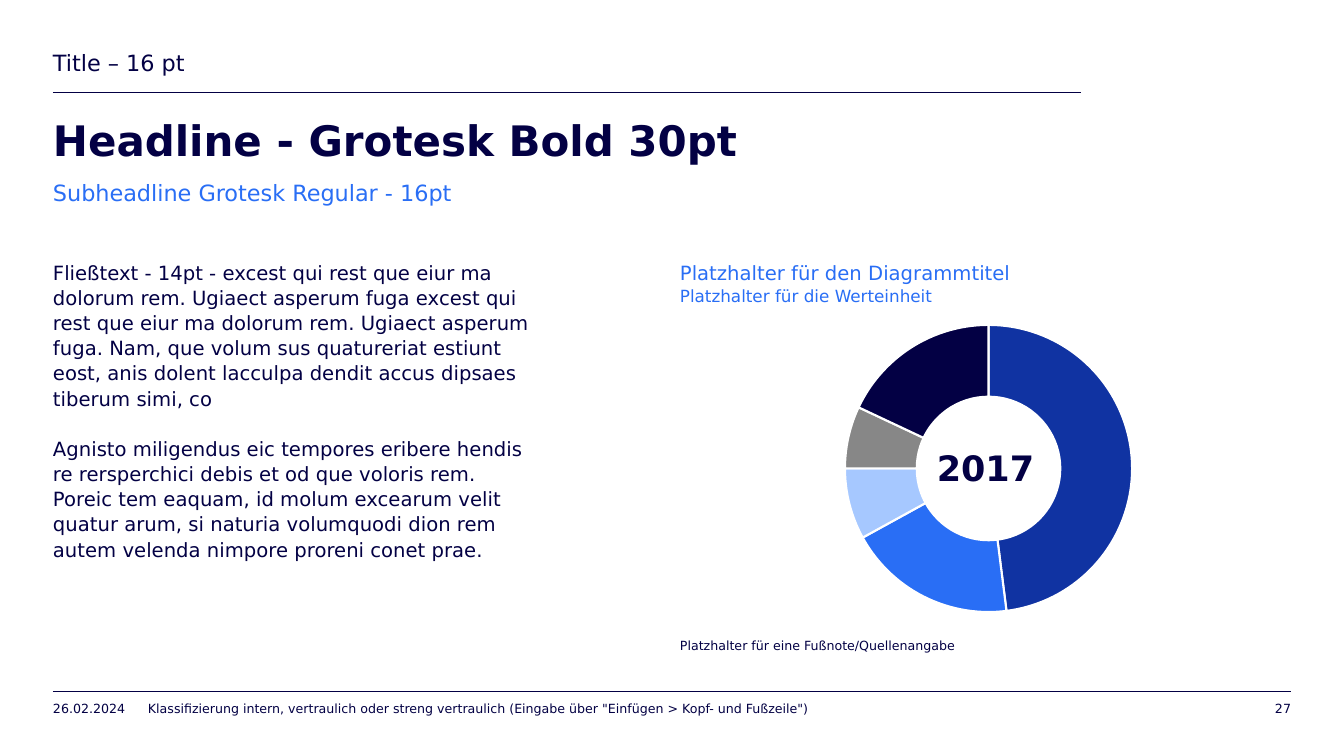
from dataclasses import dataclass

from lxml import etree
from pptx import Presentation
from pptx import util as u
from pptx.chart.data import CategoryChartData
from pptx.dml.color import RGBColor
from pptx.enum import chart, shapes, text
from pptx.oxml import parse_xml
from pptx.oxml.ns import nsdecls, qn


@dataclass(frozen=True)
class Theme:
    font: str = "DejaVu Sans"
    navy: str = "030044"
    blue: str = "296EF5"
    white: str = "FFFFFF"
    slices: tuple = ("1033A2", "296EF5", "A6C8FF", "878787", "030044")
    headline: int = 30
    year: int = 25
    title: int = 16
    body: int = 14
    unit: int = 12
    chart: int = 10
    small: int = 9


THEME = Theme()
EMU_PER_PX = 914400 / 100.8


def px(length):
    return u.Emu(round(length * EMU_PER_PX))


def rgb(value):
    return RGBColor.from_string(value)


class Page:
    def __init__(self, deck, theme):
        self.theme = theme
        self.slide = deck.slides.add_slide(deck.slide_layouts[6])

    def style(self, font, size, color, bold=False):
        font.name = self.theme.font
        font.size = u.Pt(size)
        font.color.rgb = rgb(color)
        font.bold = bold

    def rule(self, left, right, y):
        line = self.slide.shapes.add_connector(
            shapes.MSO_CONNECTOR.STRAIGHT, px(left), px(y), px(right), px(y))
        line.line.color.rgb = rgb(self.theme.navy)
        line.line.width = u.Pt(0.5)
        etree.SubElement(line._element.spPr, qn("a:effectLst"))

    def fill_text(self, frame, words, size, color, bold=False, spacing=1.0, gap=0,
                  align=text.PP_ALIGN.LEFT, anchor=text.MSO_ANCHOR.TOP, wrap=True):
        frame.margin_left = frame.margin_right = 0
        frame.margin_top = frame.margin_bottom = 0
        frame.word_wrap = wrap
        frame.vertical_anchor = anchor
        frame.text = words
        for index, paragraph in enumerate(frame.paragraphs):
            paragraph.alignment = align
            paragraph.line_spacing = spacing
            if index:
                paragraph.space_before = u.Pt(gap)
            for run in paragraph.runs:
                self.style(run.font, size, color, bold)

    def label(self, box, words, size, color, **options):
        frame = self.slide.shapes.add_textbox(*map(px, box)).text_frame
        self.fill_text(frame, words, size, color, **options)

    def disc(self, box, words):
        circle = self.slide.shapes.add_shape(shapes.MSO_SHAPE.OVAL, *map(px, box))
        circle.shadow.inherit = False
        circle.fill.background()
        circle.line.fill.background()
        self.fill_text(circle.text_frame, words, self.theme.year, self.theme.navy,
                       bold=True, align=text.PP_ALIGN.CENTER,
                       anchor=text.MSO_ANCHOR.MIDDLE, wrap=False)

    def doughnut(self, box, values):
        shares = CategoryChartData()
        shares.categories = [str(n + 1) for n in range(len(values))]
        shares.add_series("Series 1", values)
        ring = self.slide.shapes.add_chart(
            chart.XL_CHART_TYPE.DOUGHNUT, *map(px, box), shares).chart
        ring.has_title = False
        ring.has_legend = False
        self.style(ring.font, self.theme.chart, self.theme.navy)
        plot = ring.plots[0]
        plot.vary_by_categories = True
        plot._element.find(qn("c:holeSize")).set("val", "50")
        for index, color in enumerate(self.theme.slices):
            part = plot.series[0].points[index].format
            part.fill.solid()
            part.fill.fore_color.rgb = rgb(color)
            part.line.color.rgb = rgb(self.theme.white)
            part.line.width = u.Pt(1.5)
        area = plot._element.getparent()
        for old in area.findall(qn("c:layout")):
            area.remove(old)
        edges = {"x": 0.27, "y": 0.05, "w": 0.47, "h": 0.91}
        placing = "".join(f'<c:{k} val="{v}"/>' for k, v in edges.items())
        area.insert(0, parse_xml(
            f'<c:layout {nsdecls("c")}><c:manualLayout><c:layoutTarget val="inner"/>'
            f'<c:xMode val="edge"/><c:yMode val="edge"/>{placing}'
            '</c:manualLayout></c:layout>'))


BODY = "\n".join([
    "Fließtext - 14pt - excest qui rest que eiur ma\v"
    "dolorum rem. Ugiaect asperum fuga excest qui\v"
    "rest que eiur ma dolorum rem. Ugiaect asperum\v"
    "fuga. Nam, que volum sus quatureriat estiunt\v"
    "eost, anis dolent lacculpa dendit accus dipsaes\v"
    "tiberum simi, co",
    "Agnisto miligendus eic tempores eribere hendis\v"
    "re rersperchici debis et od que voloris rem.\v"
    "Poreic tem eaquam, id molum excearum velit\v"
    "quatur arum, si naturia volumquodi dion rem\v"
    "autem velenda nimpore proreni conet prae.",
])
CLASSIFICATION = ("Klassifizierung intern, vertraulich oder streng vertraulich "
                  '(Eingabe über "Einfügen > Kopf- und Fußzeile")')


def main():
    deck = Presentation()
    deck.slide_width, deck.slide_height = px(1344), px(756)
    page = Page(deck, THEME)
    navy, blue = THEME.navy, THEME.blue
    left, right, middle = 53, 1291, 680
    full, half = right - left, right - middle

    page.rule(left, 1081, 92)
    page.rule(left, right, 691)
    page.label((left, 120, full, 45), "Headline - Grotesk Bold 30pt",
               THEME.headline, navy, bold=True, spacing=0.9)
    page.label((left, 259, 1028, 393), BODY, THEME.body, navy,
               spacing=1.07, gap=18)
    page.label((left, 49, 1028, 27), "Title – 16 pt", THEME.title, navy,
               anchor=text.MSO_ANCHOR.BOTTOM)
    page.label((left, 179, full, 27), "Subheadline Grotesk Regular - 16pt",
               THEME.title, blue)

    page.doughnut((middle, 309, half, 316), (48, 19, 8, 7, 18))
    for y, height, words, size, color in (
            (259, 23, "Platzhalter für den Diagrammtitel", THEME.body, blue),
            (284, 20, "Platzhalter für die Werteinheit", THEME.unit, blue),
            (637, 15, "Platzhalter für eine Fußnote/Quellenangabe", THEME.small, navy)):
        page.label((middle, y, half, height), words, size, color, spacing=1.07)
    page.disc((914, 396, 143, 143), "2017")

    for x, width, words, align in (
            (left, 80, "26.02.2024", text.PP_ALIGN.LEFT),
            (148, 953, CLASSIFICATION, text.PP_ALIGN.LEFT),
            (1252, 39, "27", text.PP_ALIGN.RIGHT)):
        page.label((x, 701, width, 15), words, THEME.small, navy, align=align,
                   anchor=text.MSO_ANCHOR.MIDDLE)
    deck.save("out.pptx")


if __name__ == "__main__":
    main()
